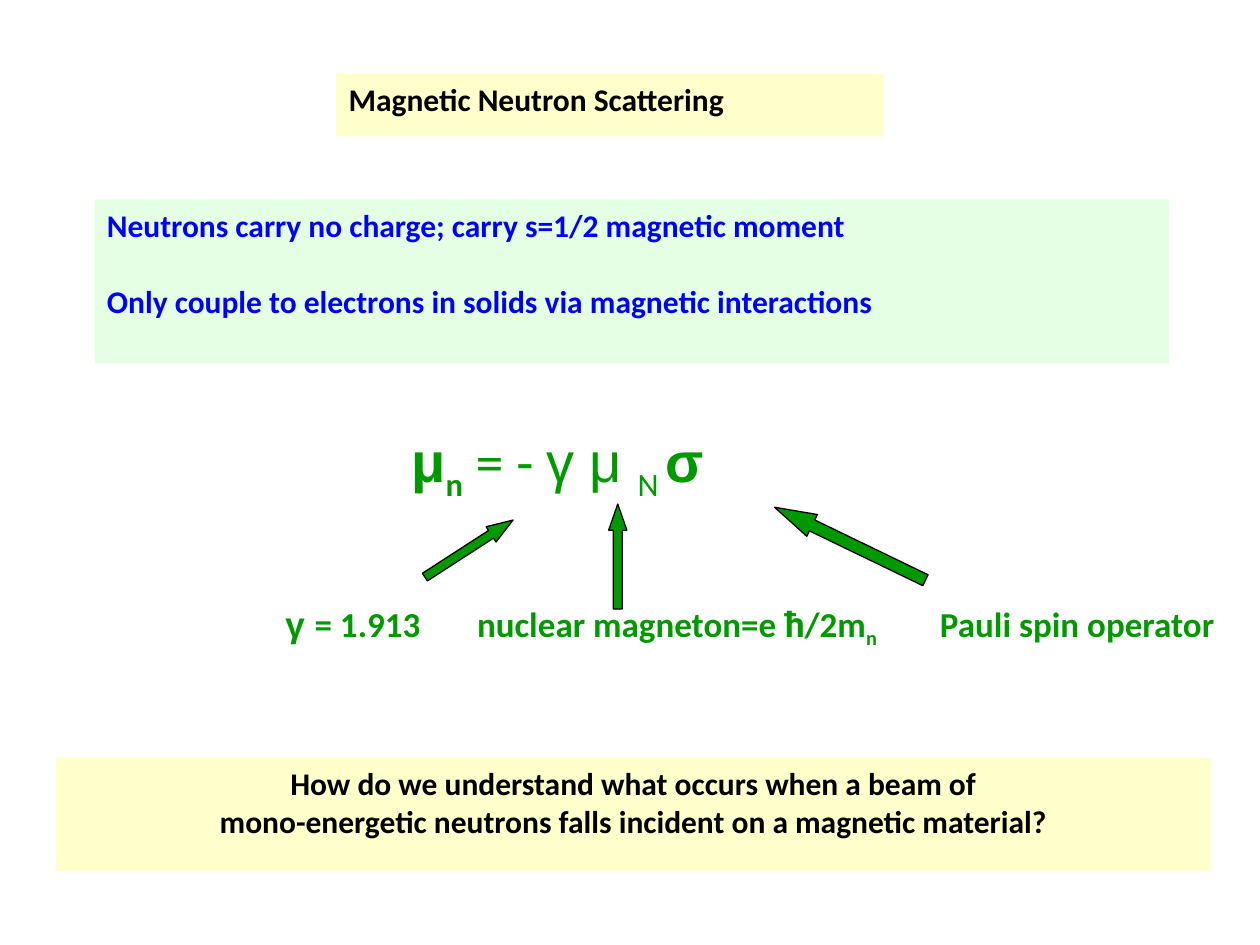
import lxml.etree
import pptx
import pptx.dml.color
import pptx.enum.shapes
import pptx.enum.text
import pptx.oxml.ns
import pptx.util

Pt = pptx.util.Pt
ALIGN = pptx.enum.text.PP_ALIGN
GREEN, YELLOW, MINT = "009900", "FFFF99", "CCFFCC"
BLACK, BLUE = "000000", "0000FF"


def color(hex_string):
    return pptx.dml.color.RGBColor.from_string(hex_string)


def write(para, text, font="Calibri", size=18, fill=BLACK, bold=True, subscript=False):
    """Append one formatted run to a paragraph."""
    span = para.add_run()
    span.text = text
    span.font.name = font
    span.font.size = Pt(size)
    span.font.bold = bold
    span.font.color.rgb = color(fill)
    if subscript:
        span._r.get_or_add_rPr().set("baseline", "-25000")


class SlideBuilder:
    def __init__(self, deck, page):
        self.deck = deck
        self.page = page

    def place(self, box, left, top, width, height):
        box.left, box.top = Pt(left), Pt(top)
        box.width, box.height = Pt(width), Pt(height)

    def tint(self, box, hex_string):
        """Fill a shape at half opacity, without an outline."""
        box.fill.solid()
        box.fill.fore_color.rgb = color(hex_string)
        swatch = box._element.spPr.find(".//" + pptx.oxml.ns.qn("a:srgbClr"))
        lxml.etree.SubElement(swatch, pptx.oxml.ns.qn("a:alpha"), val="50000")
        box.line.fill.background()

    def fill_text(self, box, lines, align=ALIGN.LEFT, gap=0, wrap=False):
        """Write lines, each a list of (text, format) pairs."""
        frame = box.text_frame
        frame.word_wrap = wrap
        frame.auto_size = pptx.enum.text.MSO_AUTO_SIZE.NONE
        frame.vertical_anchor = pptx.enum.text.MSO_ANCHOR.TOP
        for index, line in enumerate(lines):
            para = frame.add_paragraph() if index else frame.paragraphs[0]
            para.alignment = align
            para.space_before = Pt(gap if index else 0)
            for text, style in line:
                write(para, text, **style)

    def title(self, text, area, fill):
        box = self.page.shapes.title
        self.place(box, *area)
        self.tint(box, fill)
        self.fill_text(box, [[(text, {})]], wrap=True)

    def panel(self, lines, area, fill, **layout):
        box = self.page.shapes.add_shape(
            pptx.enum.shapes.MSO_SHAPE.RECTANGLE, *map(Pt, area))
        box.shadow.inherit = False
        self.tint(box, fill)
        self.fill_text(box, lines, wrap=True, **layout)

    def label(self, spans, area):
        box = self.page.shapes.add_textbox(*map(Pt, area))
        self.fill_text(box, [spans])

    def arrow(self, area, rotation, head):
        """Draw a block arrow; head is its length relative to its width."""
        box = self.page.shapes.add_shape(
            pptx.enum.shapes.MSO_SHAPE.UP_ARROW, *map(Pt, area))
        box.shadow.inherit = False
        box.adjustments[0] = 0.5
        box.adjustments[1] = head
        box.rotation = rotation
        box.fill.solid()
        box.fill.fore_color.rgb = color(GREEN)
        box.line.color.rgb = color(BLACK)
        box.line.width = Pt(0.75)


def main():
    deck = pptx.Presentation()
    deck.slide_width, deck.slide_height = Pt(720), Pt(540)
    builder = SlideBuilder(deck, deck.slides.add_slide(deck.slide_layouts[5]))

    builder.title("Magnetic Neutron Scattering", (192, 42, 313, 36), YELLOW)

    facts = ["Neutrons carry no charge; carry s=1/2 magnetic moment",
             "Only couple to electrons in solids via magnetic interactions"]
    builder.panel([[(fact, {"fill": BLUE})] for fact in facts],
                  (54, 114, 614, 93.5), MINT, gap=22)

    symbol = {"font": "Arial", "size": 32, "fill": GREEN}
    formula = {"size": 32, "fill": GREEN}
    builder.label([
        ("μ", symbol),
        ("n", {**formula, "subscript": True}),
        (" = - ", {**formula, "bold": False}),
        ("γ μ ", {**symbol, "bold": False}),
        ("N ", {**formula, "bold": False, "subscript": True}),
        ("σ", symbol),
    ], (228, 240, 187, 45))

    term = {"size": 20, "fill": GREEN}
    captions = [
        (156, 93, [("γ ", {**term, "font": "Arial"}), ("= 1.913", term)]),
        (265.5, 243, [("nuclear magneton=e ", term),
                      ("ħ", {**term, "font": "Roboto"}),
                      ("/2m", term),
                      ("n", {**term, "subscript": True})]),
        (530, 171, [("Pauli spin operator", term)]),
    ]
    for left, width, spans in captions:
        builder.label(spans, (left, 340.5, width, 31.5))

    builder.arrow((262.8, 283.5, 10.4, 60), 57.1, 1.44)
    builder.arrow((478.8, 262.8, 13.8, 95.8), 295.8, 1.73)
    builder.arrow((347.8, 288, 10.4, 60), 0, 1.44)

    question = ["How do we understand what occurs when a beam of",
                "mono-energetic neutrons falls incident on a magnetic material?"]
    builder.panel([[(line, {})] for line in question],
                  (32, 433, 660, 65), YELLOW, align=ALIGN.CENTER)

    deck.save("out.pptx")


if __name__ == "__main__":
    main()
